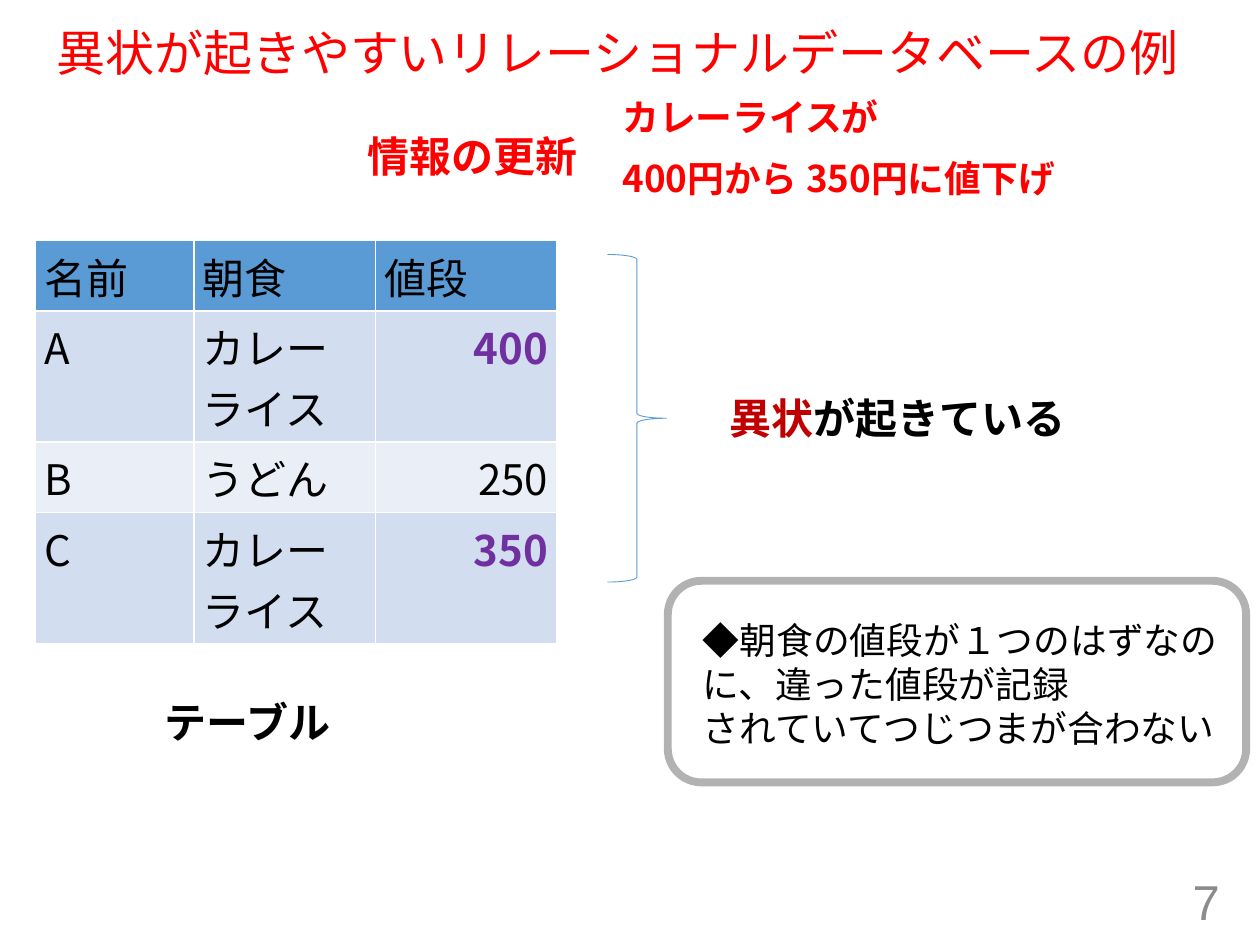
from dataclasses import dataclass

from lxml import etree
from pptx import Presentation
from pptx.dml.color import RGBColor
from pptx.enum import shapes, text
from pptx.oxml import ns
from pptx.util import Inches, Pt


@dataclass(frozen=True)
class Theme:
    red: str = "FF0000"
    dark_red: str = "C00000"
    purple: str = "7030A0"
    black: str = "000000"
    white: str = "FFFFFF"
    gray: str = "8C8C8C"
    blue: str = "5B9BD5"
    bands: tuple = ("D2DEEF", "EAEFF7")
    title_size: int = 28
    body_size: int = 24
    note_size: int = 21
    title_font: str = "Arial"
    latin_font: str = "Calibri"
    japanese_font: str = "Noto Sans CJK JP"


THEME = Theme()


def color(value):
    return RGBColor.from_string(value)


def add_run(paragraph, words, size, font, fill, bold=False):
    run = paragraph.add_run()
    run.text = words
    run.font.size = Pt(size)
    run.font.name = font
    run.font.bold = bold
    run.font.color.rgb = color(fill)
    if font == THEME.japanese_font:
        east_asian = etree.SubElement(run.font._element, ns.qn("a:ea"))
        east_asian.set("typeface", font)


def add_text(slide, box, paragraphs, size, font, bold=False, wrap=True,
             anchor=text.MSO_ANCHOR.TOP):
    """Each paragraph is a list of (words, colour) pairs."""
    frame = slide.shapes.add_textbox(*map(Inches, box)).text_frame
    frame.word_wrap = wrap
    frame.vertical_anchor = anchor
    for index, runs in enumerate(paragraphs):
        paragraph = frame.add_paragraph() if index else frame.paragraphs[0]
        for words, fill in runs:
            add_run(paragraph, words, size, font, fill, bold)
    return frame


def add_title(slide, box):
    frame = add_text(slide, box, [[("異状が起きやすいリレーショナルデータベースの例", THEME.red)]],
                     THEME.title_size, THEME.title_font,
                     anchor=text.MSO_ANCHOR.MIDDLE)
    frame.paragraphs[0].line_spacing = 0.9


def add_page_number(slide, box):
    frame = add_text(slide, box, [[("7", THEME.gray)]], THEME.title_size,
                     THEME.title_font, anchor=text.MSO_ANCHOR.MIDDLE)
    frame.paragraphs[0].alignment = text.PP_ALIGN.RIGHT


def add_price_change(slide, box):
    lines = ["カレーライスが", "400円から 350円に値下げ"]
    frame = add_text(slide, box, [[(line, THEME.red)] for line in lines],
                     THEME.note_size, THEME.japanese_font, bold=True)
    frame.margin_left = frame.margin_right = Inches(0.07)
    frame.margin_top = frame.margin_bottom = Inches(0.04)
    frame.paragraphs[1].space_before = Pt(10)


def set_borders(cell):
    properties = cell._tc.get_or_add_tcPr()
    for position, side in enumerate(("lnL", "lnR", "lnT", "lnB")):
        line = etree.Element(ns.qn("a:" + side), w=str(Pt(1)))
        fill = etree.SubElement(line, ns.qn("a:solidFill"))
        etree.SubElement(fill, ns.qn("a:srgbClr"), val=THEME.white)
        properties.insert(position, line)


def add_breakfast_table(slide, box):
    rows = [("名前", "朝食", "値段"),
            ("A", "カレーライス", "400"),
            ("B", "うどん", "250"),
            ("C", "カレーライス", "350")]
    conflicting = ("400", "350")
    table = slide.shapes.add_table(len(rows), 3, *map(Inches, box)).table
    for column, width in zip(table.columns, (1.26, 1.44, 1.44)):
        column.width = Inches(width)
    for r, (row, height) in enumerate(zip(rows, (0.56, 1.04, 0.56, 1.04))):
        table.rows[r].height = Inches(height)
        for c, words in enumerate(row):
            cell = table.cell(r, c)
            cell.margin_left = cell.margin_right = Inches(0.07)
            cell.margin_top = cell.margin_bottom = Inches(0.04)
            cell.fill.solid()
            cell.fill.fore_color.rgb = color(
                THEME.bands[(r - 1) % 2] if r else THEME.blue)
            set_borders(cell)
            paragraph = cell.text_frame.paragraphs[0]
            if r and c == 2:
                paragraph.alignment = text.PP_ALIGN.RIGHT
            marked = words in conflicting
            add_run(paragraph, words, THEME.body_size, THEME.japanese_font,
                    THEME.purple if marked else THEME.black, marked)


def add_outline(slide, kind, box, line_color, width):
    shape = slide.shapes.add_shape(kind, *map(Inches, box))
    shape.shadow.inherit = False
    shape.fill.background()
    shape.line.color.rgb = color(line_color)
    shape.line.width = Pt(width)
    return shape


def add_explanation(slide, box):
    left, top, width, height = box
    frame = add_outline(slide, shapes.MSO_SHAPE.ROUNDED_RECTANGLE, box,
                        THEME.black, 4.5)
    line_color = frame.line._ln.find(".//" + ns.qn("a:srgbClr"))
    etree.SubElement(line_color, ns.qn("a:alpha"), val="30000")
    lines = ["◆朝食の値段が１つのはずなのに、違った値段が記録", "されていてつじつまが合わない"]
    add_text(slide, (left + 0.18, top + 0.24, width - 0.22, height - 0.44),
             [[(line, THEME.black)] for line in lines],
             THEME.note_size, THEME.latin_font)


def main():
    presentation = Presentation()
    presentation.slide_width = Inches(10)
    presentation.slide_height = Inches(7.5)
    slide = presentation.slides.add_slide(presentation.slide_layouts[6])

    add_title(slide, (0.35, 0.19, 9.25, 0.51))
    add_page_number(slide, (7.53, 6.95, 2.25, 0.4))
    add_breakfast_table(slide, (0.28, 1.91, 4.14, 3.2))
    add_text(slide, (1.21, 5.48, 1.55, 0.5), [[("テーブル", THEME.black)]],
             THEME.body_size, THEME.latin_font, bold=True, wrap=False)
    add_text(slide, (2.82, 0.99, 3.08, 0.5), [[("情報の更新", THEME.red)]],
             THEME.body_size, THEME.japanese_font, bold=True)
    add_price_change(slide, (4.87, 0.71, 4.59, 2.33))
    add_text(slide, (5.69, 3.07, 2.89, 0.5),
             [[("異状", THEME.dark_red), ("が起きている", THEME.black)]],
             THEME.body_size, THEME.japanese_font, bold=True, wrap=False)
    add_outline(slide, shapes.MSO_SHAPE.RIGHT_BRACE, (4.82, 2.02, 0.47, 2.6),
                THEME.blue, 0.5)
    add_explanation(slide, (5.3, 4.61, 4.59, 1.6))

    presentation.save("out.pptx")


if __name__ == "__main__":
    main()
